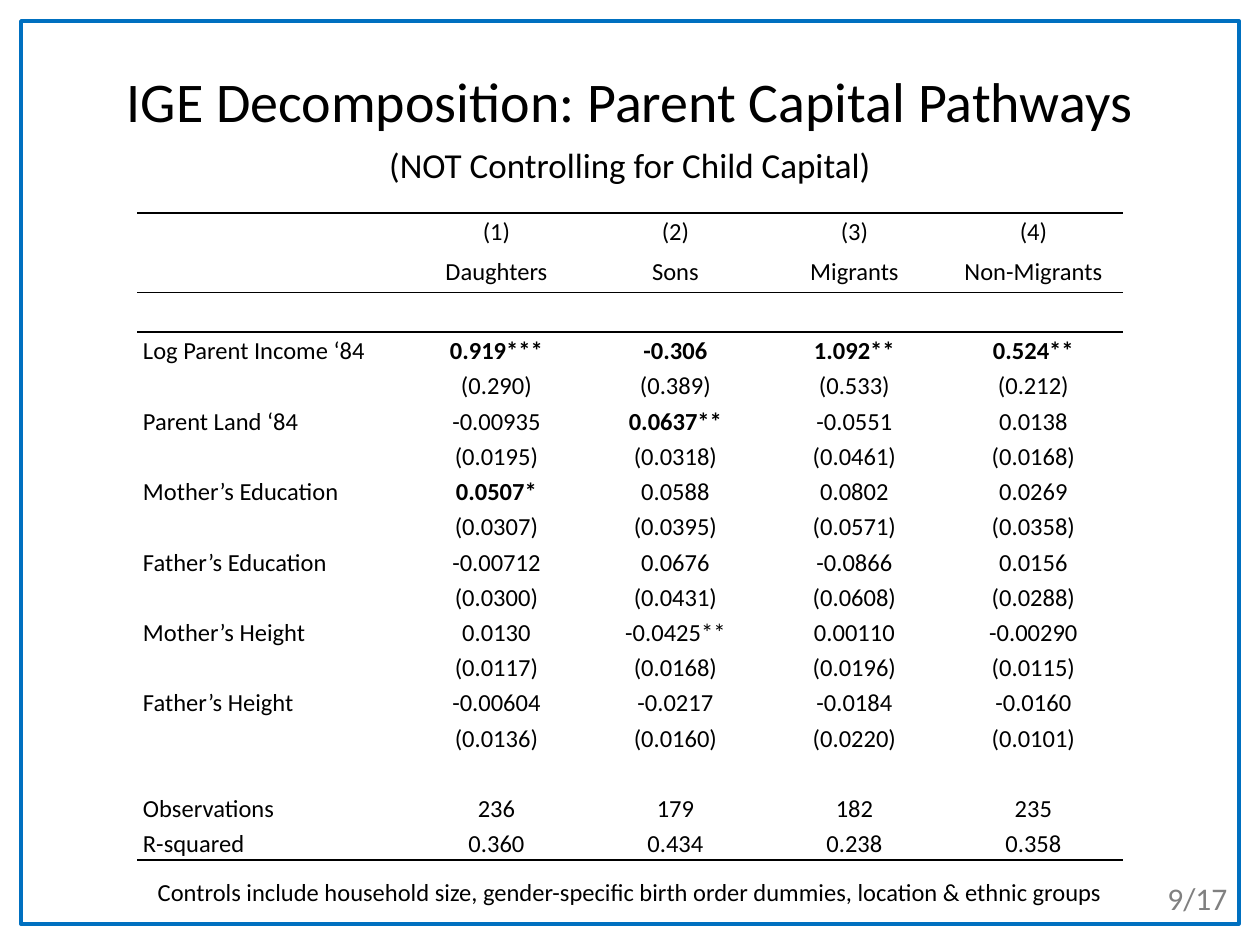
from dataclasses import dataclass

from lxml.etree import SubElement
from pptx import Presentation
from pptx.dml.color import RGBColor
from pptx.enum.shapes import MSO_SHAPE
from pptx.enum.text import MSO_ANCHOR, PP_ALIGN
from pptx.oxml.ns import qn
from pptx.util import Emu, Pt

PIXELS_PER_INCH = 126
NO_STYLE = "{2D5ABB26-0587-4C30-8999-92F81FD0307C}"


@dataclass(frozen=True)
class Theme:
    font: str = "Calibri"
    ink: str = "000000"
    frame: str = "0070C0"
    muted: str = "808080"
    title: int = 32
    subtitle: int = 20
    page: int = 18
    body: int = 14
    frame_line: int = 2
    rule: int = 1
    cell_spacing: float = 1.15


THEME = Theme()

HEADER = [
    ("", "(1)", "(2)", "(3)", "(4)"),
    ("", "Daughters", "Sons", "Migrants", "Non-Migrants"),
    ("",) * 5,
]
BODY = [
    ("Log Parent Income ‘84", "0.919***", "-0.306", "1.092**", "0.524**"),
    ("", "(0.290)", "(0.389)", "(0.533)", "(0.212)"),
    ("Parent Land ‘84", "-0.00935", "0.0637**", "-0.0551", "0.0138"),
    ("", "(0.0195)", "(0.0318)", "(0.0461)", "(0.0168)"),
    ("Mother’s Education", "0.0507*", "0.0588", "0.0802", "0.0269"),
    ("", "(0.0307)", "(0.0395)", "(0.0571)", "(0.0358)"),
    ("Father’s Education", "-0.00712", "0.0676", "-0.0866", "0.0156"),
    ("", "(0.0300)", "(0.0431)", "(0.0608)", "(0.0288)"),
    ("Mother’s Height", "0.0130", "-0.0425**", "0.00110", "-0.00290"),
    ("", "(0.0117)", "(0.0168)", "(0.0196)", "(0.0115)"),
    ("Father’s Height", "-0.00604", "-0.0217", "-0.0184", "-0.0160"),
    ("", "(0.0136)", "(0.0160)", "(0.0220)", "(0.0101)"),
    ("",) * 5,
    ("Observations", "236", "179", "182", "235"),
    ("R-squared", "0.360", "0.434", "0.238", "0.358"),
]
BOLD_VALUES = {"0.919***", "-0.306", "1.092**", "0.524**", "0.0637**", "0.0507*"}


def px(length):
    return Emu(round(length * 914400 / PIXELS_PER_INCH))


def add_run(paragraph, text, size, color=THEME.ink, bold=False):
    run = paragraph.add_run()
    run.text = text
    run.font.name = THEME.font
    run.font.size = Pt(size)
    run.font.bold = bold
    run.font.color.rgb = RGBColor.from_string(color)


def add_frame(slide, box):
    frame = slide.shapes.add_shape(MSO_SHAPE.RECTANGLE, *map(px, box))
    frame.shadow.inherit = False
    frame.fill.background()
    frame.line.color.rgb = RGBColor.from_string(THEME.frame)
    frame.line.width = Pt(THEME.frame_line)


def add_text(slide, box, text, size, color=THEME.ink,
             alignment=PP_ALIGN.CENTER, anchor=MSO_ANCHOR.TOP):
    text_frame = slide.shapes.add_textbox(*map(px, box)).text_frame
    text_frame.word_wrap = True
    text_frame.vertical_anchor = anchor
    paragraph = text_frame.paragraphs[0]
    paragraph.alignment = alignment
    add_run(paragraph, text, size, color)


def add_rule(cell, edge):
    """Draw one cell border; edge is "lnT" or "lnB"."""
    properties = cell._tc.get_or_add_tcPr()
    line = SubElement(properties, qn(f"a:{edge}"), w=str(Pt(THEME.rule)))
    fill = SubElement(line, qn("a:solidFill"))
    SubElement(fill, qn("a:srgbClr"), val=THEME.ink)


def fill_cell(cell, text, alignment):
    cell.margin_left = cell.margin_right = px(6)
    cell.margin_top = cell.margin_bottom = 0
    cell.fill.background()
    paragraph = cell.text_frame.paragraphs[0]
    paragraph.alignment = alignment
    paragraph.line_spacing = THEME.cell_spacing
    if text:
        add_run(paragraph, text, THEME.body, bold=text in BOLD_VALUES)
    else:
        SubElement(paragraph._p, qn("a:endParaRPr"), sz=str(THEME.body * 100))


def add_regression_table(slide, box, label_width, header_height):
    left, top, width, height = box
    rows = HEADER + BODY
    column_count = len(rows[0])
    graphic_frame = slide.shapes.add_table(
        len(rows), column_count, *map(px, box))
    table = graphic_frame.table
    table.first_row = table.horz_banding = False
    for style in graphic_frame._element.iter(qn("a:tableStyleId")):
        style.text = NO_STYLE

    value_width = px((width - label_width) / (column_count - 1))
    for index, column in enumerate(table.columns):
        column.width = value_width if index else px(label_width)
    header_row_height = px(header_height / len(HEADER))
    body_row_height = px((height - header_height) / len(BODY))
    for index, row in enumerate(table.rows):
        row.height = header_row_height if index < len(HEADER) else body_row_height

    rules = {0: "lnT", 1: "lnB", 2: "lnT", len(rows) - 1: "lnB"}
    for row_index, values in enumerate(rows):
        for column_index, text in enumerate(values):
            cell = table.cell(row_index, column_index)
            if row_index in rules:
                add_rule(cell, rules[row_index])
            fill_cell(cell, text,
                      PP_ALIGN.CENTER if column_index else PP_ALIGN.LEFT)


def main():
    presentation = Presentation()
    presentation.slide_width = px(1260)
    presentation.slide_height = px(945)
    slide = presentation.slides.add_slide(presentation.slide_layouts[6])

    add_frame(slide, (21, 21, 1218, 903))
    add_text(slide, (63, 21, 1134, 158),
             "IGE Decomposition: Parent Capital Pathways",
             THEME.title, anchor=MSO_ANCHOR.MIDDLE)
    add_text(slide, (105, 871, 1050, 42),
             "Controls include household size, gender-specific birth order "
             "dummies, location & ethnic groups", THEME.body)
    add_text(slide, (105, 137, 1050, 55),
             "(NOT Controlling for Child Capital)", THEME.subtitle)
    add_regression_table(slide, (137, 213, 986, 648),
                         label_width=270, header_height=119)
    add_text(slide, (1155, 873, 105, 51), "9/17", THEME.page,
             THEME.muted, PP_ALIGN.LEFT)
    presentation.save("out.pptx")


if __name__ == "__main__":
    main()
